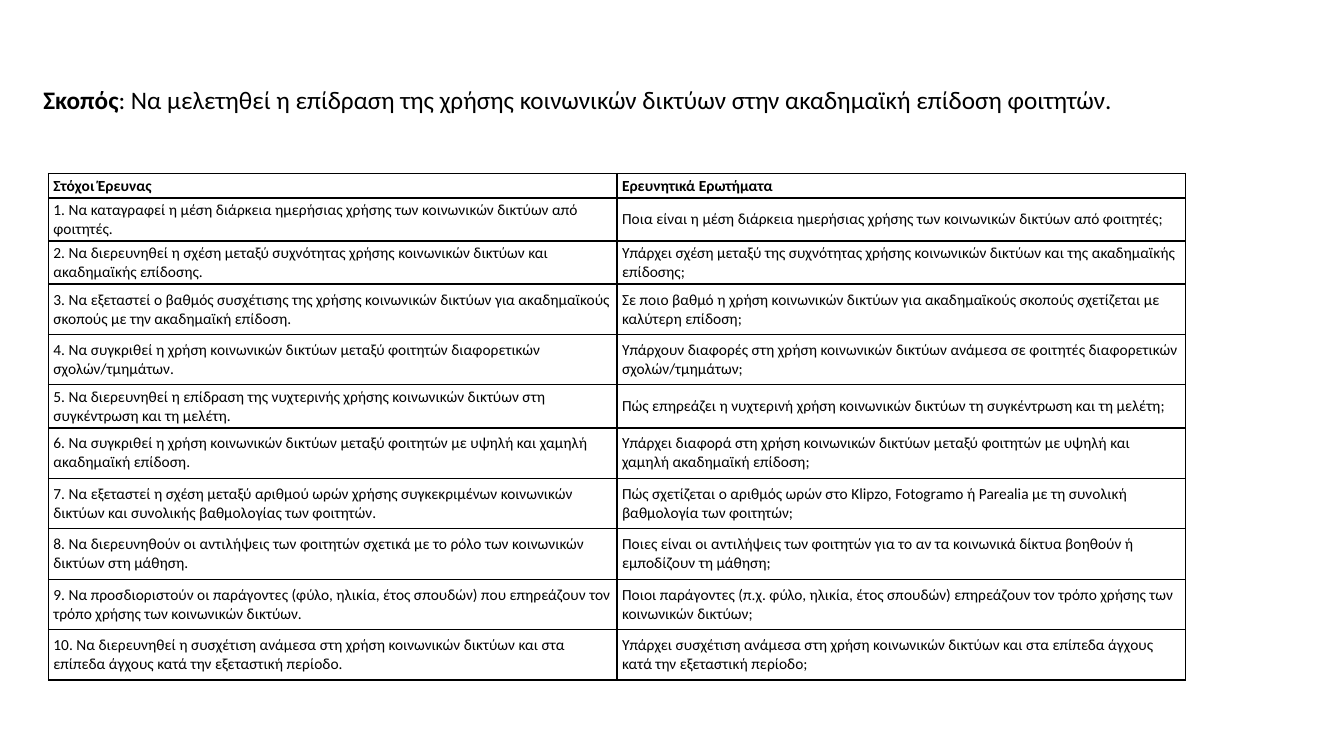
from lxml.etree import SubElement
from pptx import Presentation
from pptx.dml.color import RGBColor
from pptx.enum.text import MSO_ANCHOR, MSO_AUTO_SIZE, PP_ALIGN
from pptx.oxml.ns import qn
from pptx.util import Inches, Pt

BLACK = RGBColor(0x00, 0x00, 0x00)
WHITE = RGBColor(0xFF, 0xFF, 0xFF)

PURPOSE = (
    "Σκοπός",
    ": Να μελετηθεί η επίδραση της χρήσης κοινωνικών δικτύων στην ακαδημαϊκή επίδοση φοιτητών.",
)
HEADINGS = ("Στόχοι Έρευνας", "Ερευνητικά Ερωτήματα")
TALL, SHORT, HEADER = 0.5, 0.35, 0.2

# Row height, research goal, research question
RESEARCH = [
    (SHORT,
     "Να καταγραφεί η μέση διάρκεια ημερήσιας χρήσης των κοινωνικών δικτύων από φοιτητές.",
     "Ποια είναι η μέση διάρκεια ημερήσιας χρήσης των κοινωνικών δικτύων από φοιτητές;"),
    (SHORT,
     "Να διερευνηθεί η σχέση μεταξύ συχνότητας χρήσης κοινωνικών δικτύων και ακαδημαϊκής επίδοσης.",
     "Υπάρχει σχέση μεταξύ της συχνότητας χρήσης κοινωνικών δικτύων και της ακαδημαϊκής επίδοσης;"),
    (TALL,
     "Να εξεταστεί ο βαθμός συσχέτισης της χρήσης κοινωνικών δικτύων για ακαδημαϊκούς σκοπούς "
     "με την ακαδημαϊκή επίδοση.",
     "Σε ποιο βαθμό η χρήση κοινωνικών δικτύων για ακαδημαϊκούς σκοπούς σχετίζεται με καλύτερη επίδοση;"),
    (TALL,
     "Να συγκριθεί η χρήση κοινωνικών δικτύων μεταξύ φοιτητών διαφορετικών σχολών/τμημάτων.",
     "Υπάρχουν διαφορές στη χρήση κοινωνικών δικτύων ανάμεσα σε φοιτητές διαφορετικών σχολών/τμημάτων;"),
    (SHORT,
     "Να διερευνηθεί η επίδραση της νυχτερινής χρήσης κοινωνικών δικτύων στη συγκέντρωση και τη μελέτη.",
     "Πώς επηρεάζει η νυχτερινή χρήση κοινωνικών δικτύων τη συγκέντρωση και τη μελέτη;"),
    (TALL,
     "Να συγκριθεί η χρήση κοινωνικών δικτύων μεταξύ φοιτητών με υψηλή και χαμηλή ακαδημαϊκή επίδοση.",
     "Υπάρχει διαφορά στη χρήση κοινωνικών δικτύων μεταξύ φοιτητών με υψηλή και χαμηλή ακαδημαϊκή επίδοση;"),
    (TALL,
     "Να εξεταστεί η σχέση μεταξύ αριθμού ωρών χρήσης συγκεκριμένων κοινωνικών δικτύων "
     "και συνολικής βαθμολογίας των φοιτητών.",
     "Πώς σχετίζεται ο αριθμός ωρών στο Klipzo, Fotogramo ή Parealia με τη συνολική βαθμολογία των φοιτητών;"),
    (TALL,
     "Να διερευνηθούν οι αντιλήψεις των φοιτητών σχετικά με το ρόλο των κοινωνικών δικτύων στη μάθηση.",
     "Ποιες είναι οι αντιλήψεις των φοιτητών για το αν τα κοινωνικά δίκτυα βοηθούν ή εμποδίζουν τη μάθηση;"),
    (TALL,
     "Να προσδιοριστούν οι παράγοντες (φύλο, ηλικία, έτος σπουδών) που επηρεάζουν τον τρόπο χρήσης "
     "των κοινωνικών δικτύων.",
     "Ποιοι παράγοντες (π.χ. φύλο, ηλικία, έτος σπουδών) επηρεάζουν τον τρόπο χρήσης των κοινωνικών δικτύων;"),
    (TALL,
     "Να διερευνηθεί η συσχέτιση ανάμεσα στη χρήση κοινωνικών δικτύων και στα επίπεδα άγχους "
     "κατά την εξεταστική περίοδο.",
     "Υπάρχει συσχέτιση ανάμεσα στη χρήση κοινωνικών δικτύων και στα επίπεδα άγχους "
     "κατά την εξεταστική περίοδο;"),
]


class SlideBuilder:
    font_name = "Calibri"
    title_size = Pt(18)
    cell_size = Pt(11)
    border_width = Pt(1)

    def __init__(self, slide):
        self.slide = slide

    def style(self, font, size):
        font.name = self.font_name
        font.size = size
        font.color.rgb = BLACK

    def title(self, lead, rest, left, top, width, height):
        """Place the title, with its lead word in bold."""
        title = self.slide.shapes.title
        title.left, title.top = Inches(left), Inches(top)
        title.width, title.height = Inches(width), Inches(height)
        frame = title.text_frame
        frame.word_wrap = True
        frame.auto_size = MSO_AUTO_SIZE.SHAPE_TO_FIT_TEXT
        frame.vertical_anchor = MSO_ANCHOR.TOP
        paragraph = frame.paragraphs[0]
        paragraph.alignment = PP_ALIGN.LEFT
        self.style(paragraph.font, self.title_size)
        for text, bold in ((lead, True), (rest, False)):
            run = paragraph.add_run()
            run.text = text
            run.font.bold = bold
            self.style(run.font, self.title_size)

    def table(self, rows, heights, left, top, width, height):
        """Draw a bordered table whose first row is bold."""
        columns = len(rows[0])
        frame = self.slide.shapes.add_table(
            len(rows), columns, Inches(left), Inches(top), Inches(width), Inches(height))
        table = frame.table
        table.first_row = table.horz_banding = False
        for column in table.columns:
            column.width = Inches(width / columns)
        for index, (texts, row_height) in enumerate(zip(rows, heights)):
            table.rows[index].height = Inches(row_height)
            for cell, text in zip(table.rows[index].cells, texts):
                self.cell(cell, text, bold=index == 0)
        frame.height = Inches(height)

    def cell(self, cell, text, bold):
        cell.text = text
        cell.vertical_anchor = MSO_ANCHOR.MIDDLE
        cell.margin_left = cell.margin_right = Inches(0.05)
        cell.margin_top = cell.margin_bottom = Inches(0.03)
        font = cell.text_frame.paragraphs[0].font
        self.style(font, self.cell_size)
        font.bold = bold
        self.borders(cell)
        cell.fill.solid()
        cell.fill.fore_color.rgb = WHITE

    def borders(self, cell):
        properties = cell._tc.get_or_add_tcPr()
        for side in ("a:lnL", "a:lnR", "a:lnT", "a:lnB"):
            line = SubElement(properties, qn(side), w=str(self.border_width))
            fill = SubElement(line, qn("a:solidFill"))
            SubElement(fill, qn("a:srgbClr"), val=str(BLACK))


def main():
    deck = Presentation()
    deck.slide_width, deck.slide_height = Inches(13.33), Inches(7.5)
    title_only = deck.slide_layouts[5]
    builder = SlideBuilder(deck.slides.add_slide(title_only))

    builder.title(*PURPOSE, left=0.33, top=0.79, width=12.09, height=0.4)
    rows = [HEADINGS] + [
        (f"{number}. {goal}", question)
        for number, (_, goal, question) in enumerate(RESEARCH, start=1)
    ]
    heights = [HEADER] + [row_height for row_height, _, _ in RESEARCH]
    builder.table(rows, heights, left=0.48, top=1.72, width=11.28, height=4.99)

    deck.save("out.pptx")


if __name__ == "__main__":
    main()
